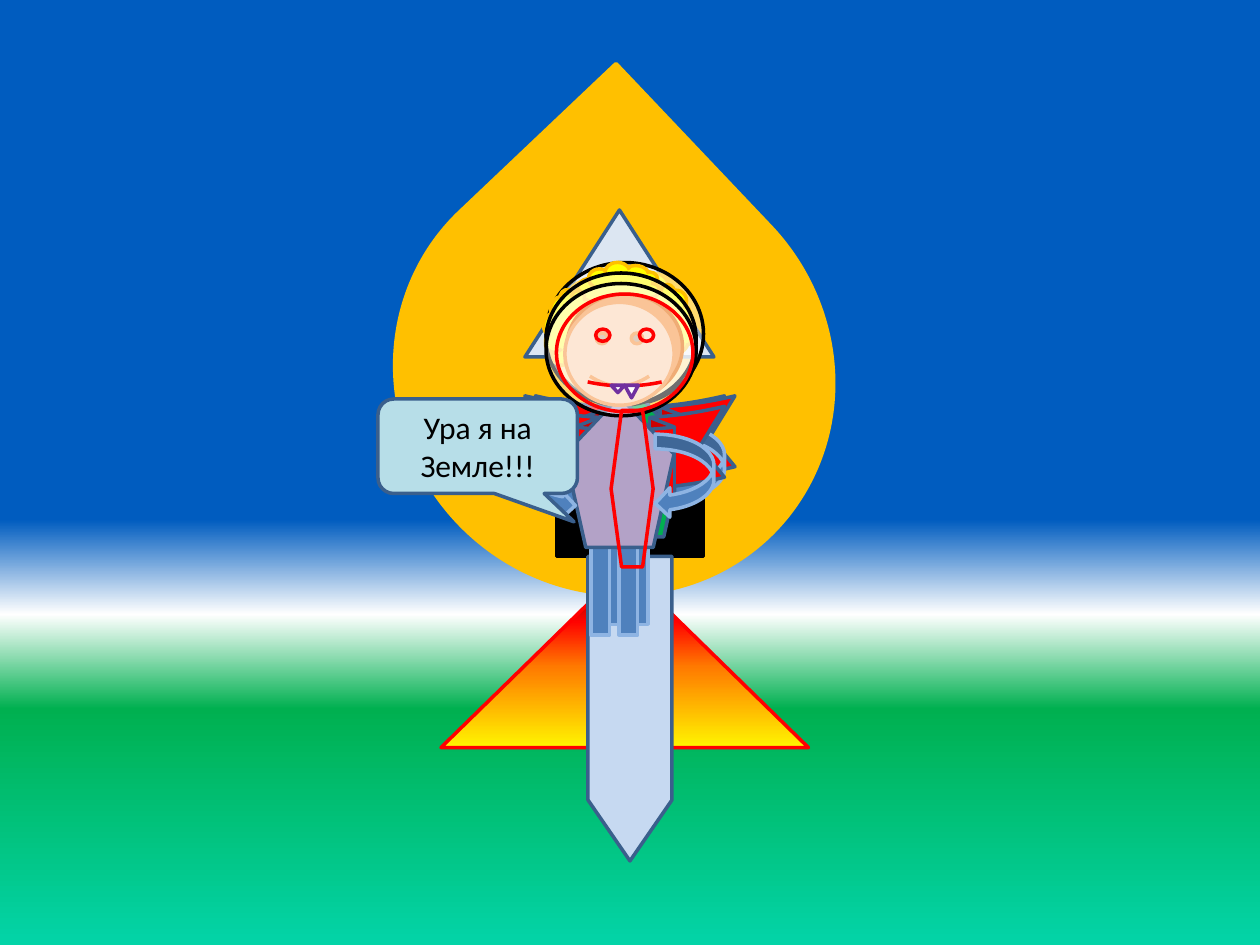
from dataclasses import dataclass
from lxml import etree
from pptx import Presentation, util as u
from pptx.dml.color import RGBColor
from pptx.enum import shapes, text
from pptx.oxml.ns import qn

S = shapes.MSO_SHAPE
COLS, ROWS = 120, 90


@dataclass(frozen=True)
class Theme:
    font: str = "Calibri"
    size: float = 18
    line: float = 2
    thin: float = 0.75
    black: str = "000000"
    white: str = "FFFFFF"
    red: str = "FF0000"
    amber: str = "FFC000"
    yellow: str = "FFFF00"
    green: str = "00B050"
    violet: str = "7030A0"
    lilac: str = "B3A2C7"
    rose: str = "D99694"
    brown: str = "953735"
    blue: str = "4F81BD"
    sky: str = "8EB4E3"
    edge: str = "3A5F8C"
    ice: str = "DCE6F2"
    steel: str = "C6D9F1"
    bubble: str = "B7DEE8"
    skin: str = "FCD5B5"
    peach: str = "F79646"
    rust: str = "E46C0A"
    land: tuple = ((55, "005CBF"), (65, "FFFFFF"), (75, "00B050"), (100, "03D4A8"))
    flame: tuple = ((1, "FFF200"), (45, "FF7A00"), (70, "FF0300"), (100, "4D0808"))


class Scene:
    """Draws on one slide; boxes are (column, row, columns, rows)."""

    def __init__(self, deck, theme):
        self.t = theme
        self.slide = deck.slides.add_slide(deck.slide_layouts[6])
        self.dx = deck.slide_width / COLS
        self.dy = deck.slide_height / ROWS

    def blend(self, fill, host, stops, angle):
        """Give a fill any number of gradient stops."""
        fill.gradient()
        grad = host.element.find(".//" + qn("a:gradFill"))
        group = grad.find(qn("a:gsLst"))
        for old in list(group):
            group.remove(old)
        for pos, color in stops:
            stop = etree.SubElement(group, qn("a:gs"), pos=str(pos * 1000))
            etree.SubElement(stop, qn("a:srgbClr"), val=color)
        grad.find(qn("a:lin")).set("ang", str(angle * 60000))

    def back(self, stops):
        self.blend(self.slide.background.fill, self.slide, stops, 90)

    def shape(self, kind, box, fill, line, width=None, turn=0, adj=(), flip="", alpha=None):
        x, y, w, h = box
        item = self.slide.shapes.add_shape(
            kind, round(x * self.dx), round(y * self.dy),
            round(w * self.dx), round(h * self.dy))
        item.shadow.inherit = False
        item.rotation = turn
        for i, value in enumerate(adj):
            item.adjustments[i] = value
        for axis in flip:
            item.element.spPr.find(qn("a:xfrm")).set("flip" + axis, "1")
        if fill is None:
            item.fill.background()
        elif isinstance(fill, tuple):
            self.blend(item.fill, item, fill, 270)
        else:
            item.fill.solid()
            item.fill.fore_color.rgb = RGBColor.from_string(fill)
        if alpha is not None:
            color = item.element.spPr.find(qn("a:solidFill"))[0]
            etree.SubElement(color, qn("a:alpha"), val=str(alpha * 1000))
        item.line.color.rgb = RGBColor.from_string(line)
        item.line.width = u.Pt(width or self.t.line)
        return item

    def speech(self, box, words, adj):
        item = self.shape(S.ROUNDED_RECTANGULAR_CALLOUT, box,
                          self.t.bubble, self.t.edge, adj=adj)
        frame = item.text_frame
        frame.word_wrap = True
        frame.vertical_anchor = text.MSO_ANCHOR.MIDDLE
        par = frame.paragraphs[0]
        par.text = words
        par.alignment = text.PP_ALIGN.CENTER
        par.font.name, par.font.size = self.t.font, u.Pt(self.t.size)
        par.font.color.rgb = RGBColor.from_string(self.t.black)

    def body(self, x, y, legs, wings, torso, arms, face=True):
        """Draw a figure shifted by x columns and y rows."""
        t = self.t
        parts = [
            (S.MATH_EQUAL, (52.7, 51.4, 11.6, 7.6), legs, t.sky, 90, ()),
            (S.CURVED_DOWN_RIBBON, (50, 37.7, 19, 9), wings, t.edge, 0, ()),
            (S.REGULAR_PENTAGON, (53.8, 36.75, 10.4, 14.4), torso, t.edge, 0, ()),
            (S.SMILEY_FACE, (53.8, 27.8, 10.4, 9.8), t.skin, t.peach, 0, ()),
            (S.CURVED_RIGHT_ARROW, (50, 40.35, 4.8, 8), arms, t.sky, 0, (0.308, 0.5, 0.25)),
            (S.CURVED_LEFT_ARROW, (62.4, 40.35, 5.6, 8), arms, t.sky, 0, ()),
        ]
        for kind, (left, top, w, h), fill, line, turn, adj in parts:
            if face or kind != S.SMILEY_FACE:
                self.shape(kind, (left + x, top + y, w, h), fill, line, turn=turn, adj=adj)

    def helmet(self, y, w=14.3, h=12.6):
        self.shape(S.OVAL, (52, y, w, h), self.t.white, self.t.black, alpha=44)

    def curl(self, box, turn=0):
        self.shape(S.CLOUD, box, self.t.yellow, self.t.amber, turn=turn)


def main():
    deck = Presentation()
    deck.slide_width, deck.slide_height = u.Inches(10), u.Inches(7.5)
    t = Theme()
    s = Scene(deck, t)
    s.back(t.land)

    # Rocket
    s.shape(S.TEAR, (38, 14.3, 41, 42.7), t.amber, t.amber, turn=316.5)
    s.shape(S.ISOSCELES_TRIANGLE, (42, 54.1, 35, 17.1), t.flame, t.red)
    s.shape(S.ISOSCELES_TRIANGLE, (50, 20, 18, 14), t.ice, t.edge)
    s.shape(S.FLOWCHART_PROCESS, (53, 40, 14, 13), t.black, t.black)
    s.shape(S.FLOWCHART_OFFPAGE_CONNECTOR, (56, 53, 8, 29), t.steel, t.edge)

    # Curly figure
    s.curl((53, 26, 12, 8))
    s.body(0, 0, t.brown, t.violet, t.rose, t.rose)
    s.helmet(25, 15, 13.6)
    s.curl((60.3, 28.1, 6.6, 4.6), 86.6)
    s.curl((55, 25, 7.8, 5), 180)
    s.curl((50.5, 28.8, 7.3, 4.8), 104.5)

    # Green figure
    s.body(1, 0, t.blue, t.red, t.green, t.blue, face=False)
    s.helmet(26)
    s.shape(S.OVAL, (54, 28, 11, 10), t.peach, t.rust)
    for x in (56, 61):
        s.shape(S.MATH_MINUS, (x, 32, 2, 0.6), t.rust, t.rust)
    s.shape(S.ARC, (58.1, 35.3, 5, 0.8), t.rust, t.rust, t.thin, turn=174.1)

    # Lilac figure
    s.body(0, 1, t.blue, t.red, t.lilac, t.blue)
    s.helmet(27)

    # Red mask with fangs and tie
    s.shape(S.SMILEY_FACE, (53, 28, 13, 11.2), None, t.red, adj=(0.017,))
    for x, h, flip in ((58.2, 0.7, "V"), (59.5, 1.2, "HV")):
        s.shape(S.ISOSCELES_TRIANGLE, (x, 36.7, 1.3, h), t.white, t.violet, flip=flip)
    s.shape(S.HEXAGON, (58.2, 39.1, 4, 14.9), None, t.red)

    s.speech((36, 38, 19, 9), "Ура я на Земле!!!", (0.483, 0.8, 0.167))
    deck.save("out.pptx")


if __name__ == "__main__":
    main()
